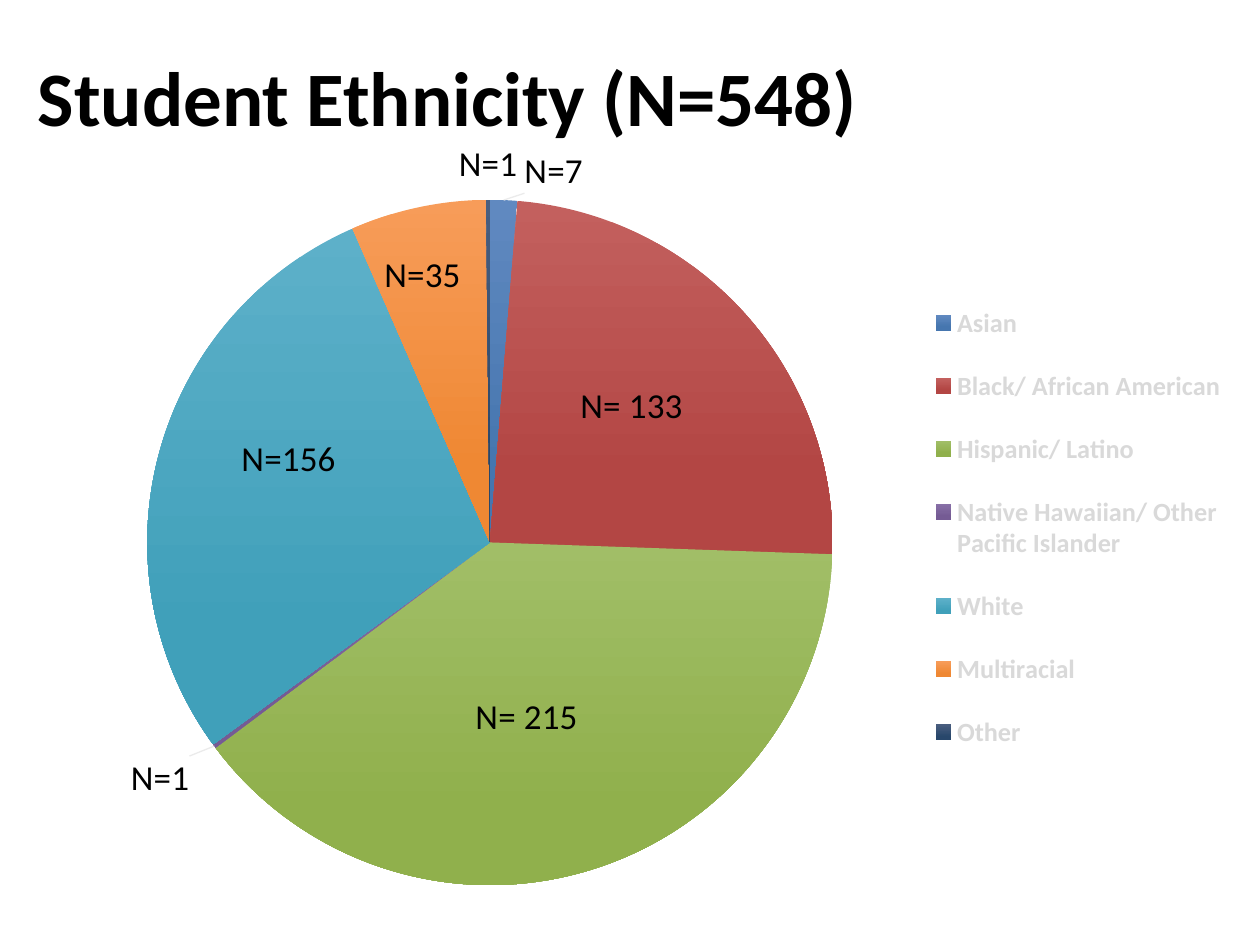
from math import cos, pi, sin

from pptx import Presentation
from pptx.chart.data import CategoryChartData
from pptx.dml.color import RGBColor
from pptx.enum.chart import XL_CHART_TYPE, XL_LABEL_POSITION, XL_LEGEND_POSITION
from pptx.enum.text import MSO_ANCHOR, PP_ALIGN
from pptx.oxml import parse_xml
from pptx.oxml.ns import nsdecls, qn
from pptx.util import Pt

PIE = XL_CHART_TYPE.PIE
LABEL_CENTER = XL_LABEL_POSITION.CENTER
LEGEND_RIGHT = XL_LEGEND_POSITION.RIGHT
MIDDLE = MSO_ANCHOR.MIDDLE
CENTER = PP_ALIGN.CENTER

BLACK = RGBColor(0x00, 0x00, 0x00)
PALE_GRAY = RGBColor(0xD9, 0xD9, 0xD9)
LEADER_GRAY = RGBColor(0xEB, 0xEB, 0xEB)
BLUES = RGBColor(0x60, 0x89, 0xC0), RGBColor(0x46, 0x76, 0xAF)
REDS = RGBColor(0xC3, 0x60, 0x5E), RGBColor(0xB3, 0x46, 0x44)
GREENS = RGBColor(0xA1, 0xBE, 0x67), RGBColor(0x90, 0xB0, 0x4C)
PURPLES = RGBColor(0x88, 0x70, 0xA7), RGBColor(0x75, 0x5B, 0x94)
TEALS = RGBColor(0x5D, 0xB0, 0xC9), RGBColor(0x40, 0xA0, 0xBA)
ORANGES = RGBColor(0xF7, 0x9C, 0x59), RGBColor(0xEF, 0x88, 0x33)
NAVIES = RGBColor(0x49, 0x5E, 0x7F), RGBColor(0x28, 0x47, 0x6B)

CHART_LEFT, CHART_TOP, CHART_WIDTH, CHART_HEIGHT = 0, 75, 720, 465
PIE_X, PIE_Y, RADIUS = 280, 310, 195.8

GROUPS = [
    ("Asian", 7, "N=7", (316.5, 98), BLUES),
    ("Black/ African American", 133, "N= 133", (361, 232), REDS),
    ("Hispanic/ Latino", 215, "N= 215", (301, 410), GREENS),
    ("Native Hawaiian/ Other Pacific Islander", 1, "N=1", (91.5, 444.5), PURPLES),
    ("White", 156, "N=156", (165, 262.5), TEALS),
    ("Multiracial", 35, "N=35", (241.5, 157), ORANGES),
    ("Other", 1, "N=1", (279, 94), NAVIES),
]


class SlideBuilder:
    """Holds the text style and the current slide, and adds each kind of element."""

    def __init__(self, slide, font_name="Calibri"):
        self.slide = slide
        self.font_name = font_name

    def style(self, font, size, color, bold=False):
        font.name, font.size, font.bold = self.font_name, Pt(size), bold
        font.color.rgb = color

    def title(self, text, left, top, width, height, size):
        box = self.slide.shapes.add_textbox(Pt(left), Pt(top), Pt(width), Pt(height))
        frame = box.text_frame
        frame.word_wrap = True
        frame.vertical_anchor = MIDDLE
        para = frame.paragraphs[0]
        para.alignment = CENTER
        span = para.add_run()
        span.text = text
        self.style(span.font, size, BLACK, bold=True)

    def layout(self, parent, index, sizes, target=""):
        for old in parent.findall(qn("c:layout")):
            parent.remove(old)
        modes = "".join(f'<c:{axis}Mode val="edge"/>' for axis in "xy") if target else ""
        inner = '<c:layoutTarget val="inner"/>' if target == "inner" else ""
        values = "".join(f'<c:{key} val="{value:.4f}"/>' for key, value in zip("xywh", sizes))
        parent.insert(index, parse_xml(
            f'<c:layout {nsdecls("c")}><c:manualLayout>{inner}{modes}{values}'
            "</c:manualLayout></c:layout>"))

    def leader_lines(self, labels, color):
        labels._element.append(parse_xml(
            f'<c:leaderLines {nsdecls("c", "a")}><c:spPr><a:ln w="9525"><a:solidFill>'
            f'<a:srgbClr val="{color}"/></a:solidFill></a:ln></c:spPr></c:leaderLines>'))

    def legend(self, chart, left, top, width, height):
        chart.has_legend = True
        legend = chart.legend
        legend.position = LEGEND_RIGHT
        legend.include_in_layout = False
        self.style(legend.font, 15, PALE_GRAY, bold=True)
        self.layout(legend._element, 1, self.fractions(left, top, width, height), "outer")

    def fractions(self, left, top, width, height):
        return ((left - CHART_LEFT) / CHART_WIDTH, (top - CHART_TOP) / CHART_HEIGHT,
                width / CHART_WIDTH, height / CHART_HEIGHT)

    def slice(self, point, label_text, offset, colors):
        fill = point.format.fill
        fill.gradient()
        fill.gradient_angle = 270
        for stop, position, color in zip(fill.gradient_stops, (0, 0.78), colors):
            stop.color.rgb = color
            stop.position = position
        label = point.data_label
        span = label.text_frame.paragraphs[0].add_run()
        span.text = label_text
        self.style(span.font, 20, BLACK)
        label.position = LABEL_CENTER
        self.layout(label._dLbl, 1, offset)

    def pie(self, groups):
        total = sum(group[1] for group in groups)
        data = CategoryChartData()
        data.categories = [group[0] for group in groups]
        data.add_series("Series 1", [group[1] for group in groups])
        chart = self.slide.shapes.add_chart(
            PIE, Pt(CHART_LEFT), Pt(CHART_TOP), Pt(CHART_WIDTH), Pt(CHART_HEIGHT), data).chart
        chart.has_title = False
        self.style(chart.font, 10, BLACK)
        plot = chart.plots[0]
        plot.vary_by_categories = True
        series = plot.series[0]
        labels = series.data_labels
        labels.show_value, labels.show_percentage = False, True
        self.style(labels.font, 20, PALE_GRAY, bold=True)
        self.leader_lines(labels, LEADER_GRAY)
        passed = 0
        for index, (_, count, text, (x, y), colors) in enumerate(groups):
            angle = 2 * pi * (passed + count / 2) / total
            passed += count
            offset = ((x - PIE_X - RADIUS / 2 * sin(angle)) / CHART_WIDTH,
                      (y - PIE_Y + RADIUS / 2 * cos(angle)) / CHART_HEIGHT)
            self.slice(series.points[index], text, offset, colors)
        area = self.fractions(PIE_X - RADIUS, PIE_Y - RADIUS, 2 * RADIUS, 2 * RADIUS)
        self.layout(plot._element.getparent(), 0, area, "inner")
        return chart


def main():
    deck = Presentation()
    deck.slide_width, deck.slide_height = Pt(720), Pt(540)
    page = SlideBuilder(deck.slides.add_slide(deck.slide_layouts[6]))
    page.title("Student Ethnicity (N=548)", 2, 2.5, 508, 104, 44)
    chart = page.pie(GROUPS)
    page.legend(chart, 524, 157.5, 184, 288)
    deck.save("out.pptx")


if __name__ == "__main__":
    main()
